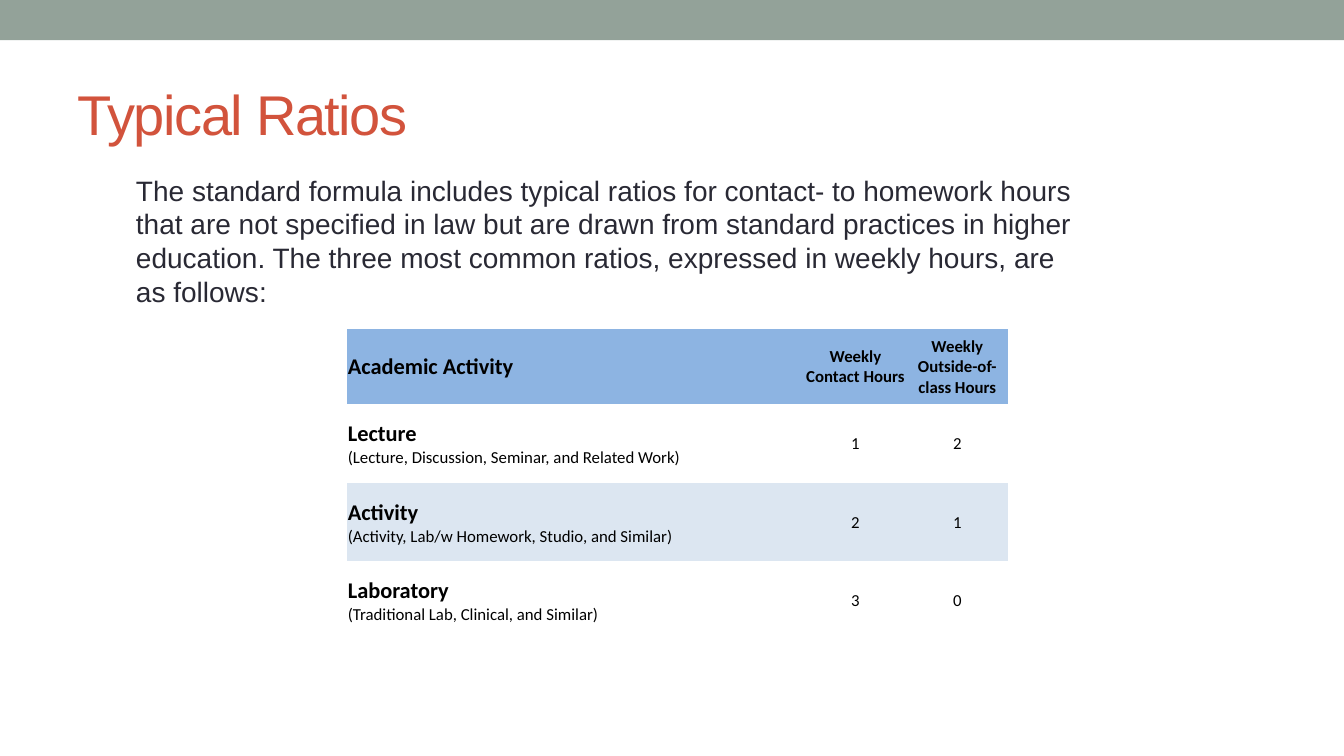
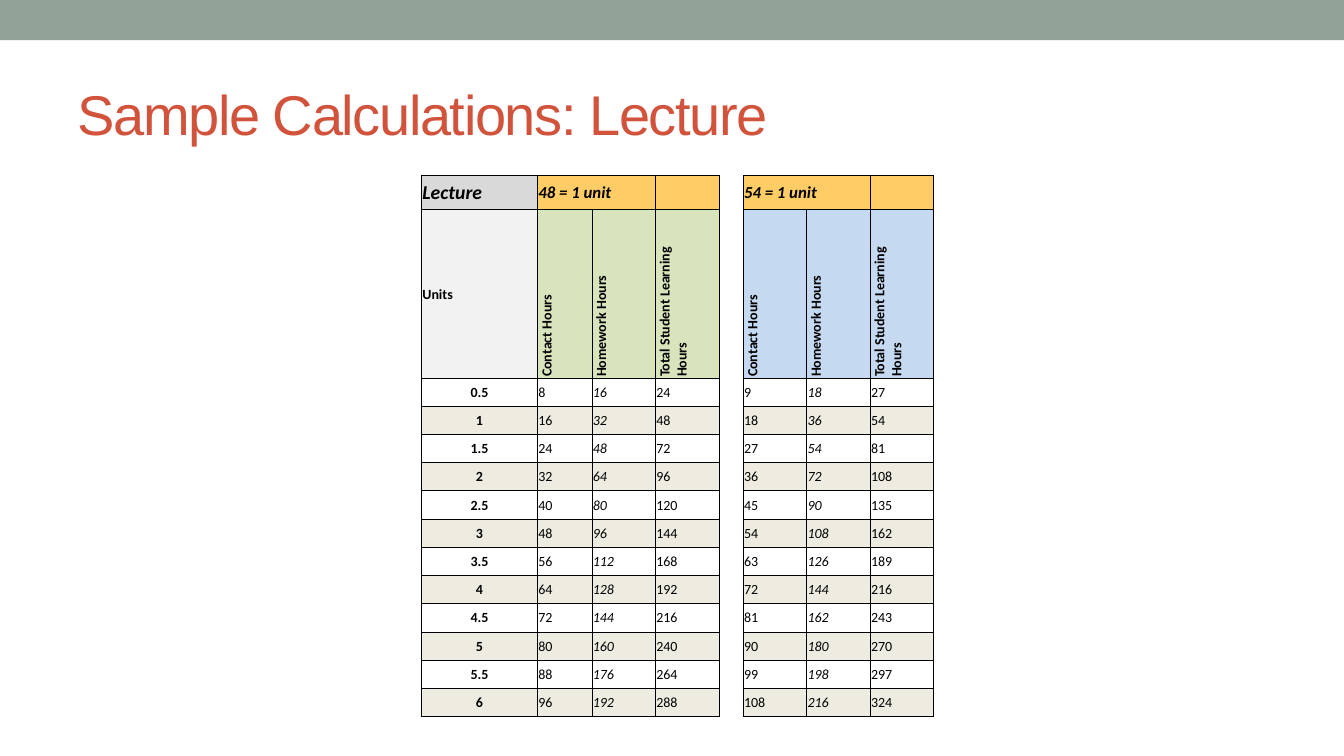
"""Build two slides on contact and homework hour ratios."""
import pptx
import pptx.dml.color
import pptx.enum.shapes
import pptx.enum.text
import pptx.oxml
import pptx.oxml.ns
import pptx.util
from lxml import etree

Inches, Pt = pptx.util.Inches, pptx.util.Pt
qn = pptx.oxml.ns.qn
ALIGN = pptx.enum.text.PP_ALIGN
ANCHOR = pptx.enum.text.MSO_ANCHOR


class Theme:
    band, title, body, ink = "93A299", "D2533C", "292934", "000000"
    ratio_head, ratio_stripe = "8DB4E2", "DCE6F1"
    corner, units, formula, stripe = "D9D9D9", "F2F2F2", "FFCC66", "EEECE1"
    hour_heads = ("D8E4BC", "C5D9F1")
    font, table_font = "Arial", "Calibri"
    title_size, body_size = 40, 20
    large, medium, normal, small = 16, 14, 12, 10
    border = 0.5
    plain_table = "{2D5ABB26-0587-4C30-8999-92F81FD0307C}"


RATIO_TITLE = "Typical Ratios"
RATIO_INTRO = (
    "The standard formula includes typical ratios for contact- to homework hours "
    "that are not specified in law but are drawn from standard practices in higher "
    "education. The three most common ratios, expressed in weekly hours, are as follows:"
)
RATIO_HEADS = ("Academic Activity", "Weekly Contact Hours", "Weekly Outside-of-class Hours")
RATIOS = [
    ("Lecture", "(Lecture, Discussion, Seminar, and Related Work)", 1, 2),
    ("Activity", "(Activity, Lab/w Homework, Studio, and Similar)", 2, 1),
    ("Laboratory", "(Traditional Lab, Clinical, and Similar)", 3, 0),
]
RATIO_COLS = (4.54, 1.01, 1.01)
RATIO_ROWS = (0.75, 0.78, 0.78, 0.78)

LECTURE_TITLE = "Sample Calculations: Lecture"
HOUR_HEADS = ("Contact Hours", "Homework Hours", "Total Student Learning Hours")
HOURS_PER_UNIT = (48, 54)
UNITS = [n / 2 for n in range(1, 13)]
LECTURE_COLS = (1.15, 0.54, 0.63, 0.63, 0.24, 0.63, 0.63, 0.63)
LECTURE_ROWS = (0.34, 1.59) + (0.28,) * len(UNITS)
GAP_COL = 4
GROUP_COLS = (1, 5)


def rgb(color):
    return pptx.dml.color.RGBColor.from_string(color)


def add_run(p, text, size, color=Theme.ink, font=Theme.table_font, bold=False, italic=False):
    r = p.add_run()
    r.text = text
    f = r.font
    f.size, f.name, f.bold, f.italic = Pt(size), font, bold, italic
    f.color.rgb = rgb(color)
    return r


def add_text(s, box, text, size, color, anchor):
    tf = s.shapes.add_textbox(*map(Inches, box)).text_frame
    tf.word_wrap = True
    tf.vertical_anchor = anchor
    return add_run(tf.paragraphs[0], text, size, color, Theme.font)


def add_slide(prs, title):
    s = prs.slides.add_slide(prs.slide_layouts[6])
    band = s.shapes.add_shape(
        pptx.enum.shapes.MSO_SHAPE.RECTANGLE, 0, 0, prs.slide_width, Inches(0.4))
    band.shadow.inherit = False
    band.fill.solid()
    band.fill.fore_color.rgb = rgb(Theme.band)
    band.line.fill.background()
    r = add_text(s, (0.67, 0.58, 12, 1.08), title, Theme.title_size, Theme.title, ANCHOR.MIDDLE)
    r.font._element.set("spc", "-100")
    return s


def add_table(s, left, top, cols, rows):
    frame = s.shapes.add_table(
        len(rows), len(cols), *map(Inches, (left, top, sum(cols), sum(rows))))
    next(frame._element.iter(qn("a:tableStyleId"))).text = Theme.plain_table
    table = frame.table
    table.first_row = table.horz_banding = False
    for col, width in zip(table.columns, cols):
        col.width = Inches(width)
    for row, height in zip(table.rows, rows):
        row.height = Inches(height)
    return table


def set_borders(cell, sides):
    tcPr = cell._tc.get_or_add_tcPr()
    for side in sides:
        ln = etree.SubElement(tcPr, qn(f"a:ln{side}"), w=str(Pt(Theme.border)))
        solid = etree.SubElement(ln, qn("a:solidFill"))
        etree.SubElement(solid, qn("a:srgbClr"), val=Theme.ink)


def fill_cell(cell, runs=(), fill=None, align=ALIGN.LEFT, anchor=ANCHOR.MIDDLE, borders=""):
    set_borders(cell, borders)
    cell.margin_left = cell.margin_right = cell.margin_top = Inches(0.01)
    cell.margin_bottom = 0
    cell.vertical_anchor = anchor
    if fill:
        cell.fill.solid()
        cell.fill.fore_color.rgb = rgb(fill)
    else:
        cell.fill.background()
    p = cell.text_frame.paragraphs[0]
    p.alignment = align
    for i, (text, size, bold, italic) in enumerate(runs):
        if i:
            p.add_line_break()
        add_run(p, text, size, bold=bold, italic=italic)
    if not runs:
        etree.SubElement(p._p, qn("a:endParaRPr"), sz=str(Theme.small * 100))


def build_ratios(prs):
    s = add_slide(prs, RATIO_TITLE)
    add_text(s, (1.25, 1.67, 9.61, 1.5), RATIO_INTRO, Theme.body_size, Theme.body, ANCHOR.TOP)
    table = add_table(s, 3.44, 3.26, RATIO_COLS, RATIO_ROWS)
    for c, head in enumerate(RATIO_HEADS):
        size, align = (Theme.normal, ALIGN.CENTER) if c else (Theme.large, ALIGN.LEFT)
        fill_cell(table.cell(0, c), [(head, size, True, False)], Theme.ratio_head, align)
    for r, (name, detail, *hours) in enumerate(RATIOS, 1):
        fill = None if r % 2 else Theme.ratio_stripe
        fill_cell(table.cell(r, 0), [(name, Theme.large, True, False),
                                     (detail, Theme.normal, False, False)], fill)
        for c, value in enumerate(hours, 1):
            fill_cell(table.cell(r, c), [(str(value), Theme.normal, False, False)],
                      fill, ALIGN.CENTER)


def build_lecture(prs):
    s = add_slide(prs, LECTURE_TITLE)
    table = add_table(s, 4.18, 1.74, LECTURE_COLS, LECTURE_ROWS)

    def put(r, c, text, fill, size=Theme.small, bold=False, italic=False,
            align=ALIGN.JUSTIFY, anchor=ANCHOR.MIDDLE):
        runs = [(text, size, bold, italic)] if text else []
        fill_cell(table.cell(r, c), runs, fill, align, anchor, "LRTB")

    put(0, 0, "Lecture", Theme.corner, Theme.medium, True, True)
    put(1, 0, "Units", Theme.units, bold=True)
    for r in range(len(LECTURE_ROWS)):
        fill_cell(table.cell(r, GAP_COL), borders="LR")
    stripes = [Theme.stripe if i % 2 else None for i in range(len(UNITS))]
    for r, (units, fill) in enumerate(zip(UNITS, stripes), 2):
        put(r, 0, f"{units:g}", fill, bold=True, align=ALIGN.CENTER)

    for first, total, head_fill in zip(GROUP_COLS, HOURS_PER_UNIT, Theme.hour_heads):
        for c, text in enumerate((f"{total} = 1 unit", "", ""), first):
            put(0, c, text, Theme.formula, Theme.normal, True, True)
        table.cell(0, first).merge(table.cell(0, first + 1))
        for part, head in enumerate(HOUR_HEADS, 1):
            c = first + part - 1
            put(1, c, head, head_fill, bold=True, align=ALIGN.LEFT, anchor=ANCHOR.BOTTOM)
            table.cell(1, c)._tc.get_or_add_tcPr().set("vert", "vert270")
            for r, (units, fill) in enumerate(zip(UNITS, stripes), 2):
                put(r, c, f"{units * total * part / 3:g}", fill, italic=part == 2)


def main():
    prs = pptx.Presentation()
    prs.slide_width, prs.slide_height = Inches(13.33), Inches(7.5)
    build_ratios(prs)
    build_lecture(prs)
    prs.save("out.pptx")


if __name__ == "__main__":
    main()
